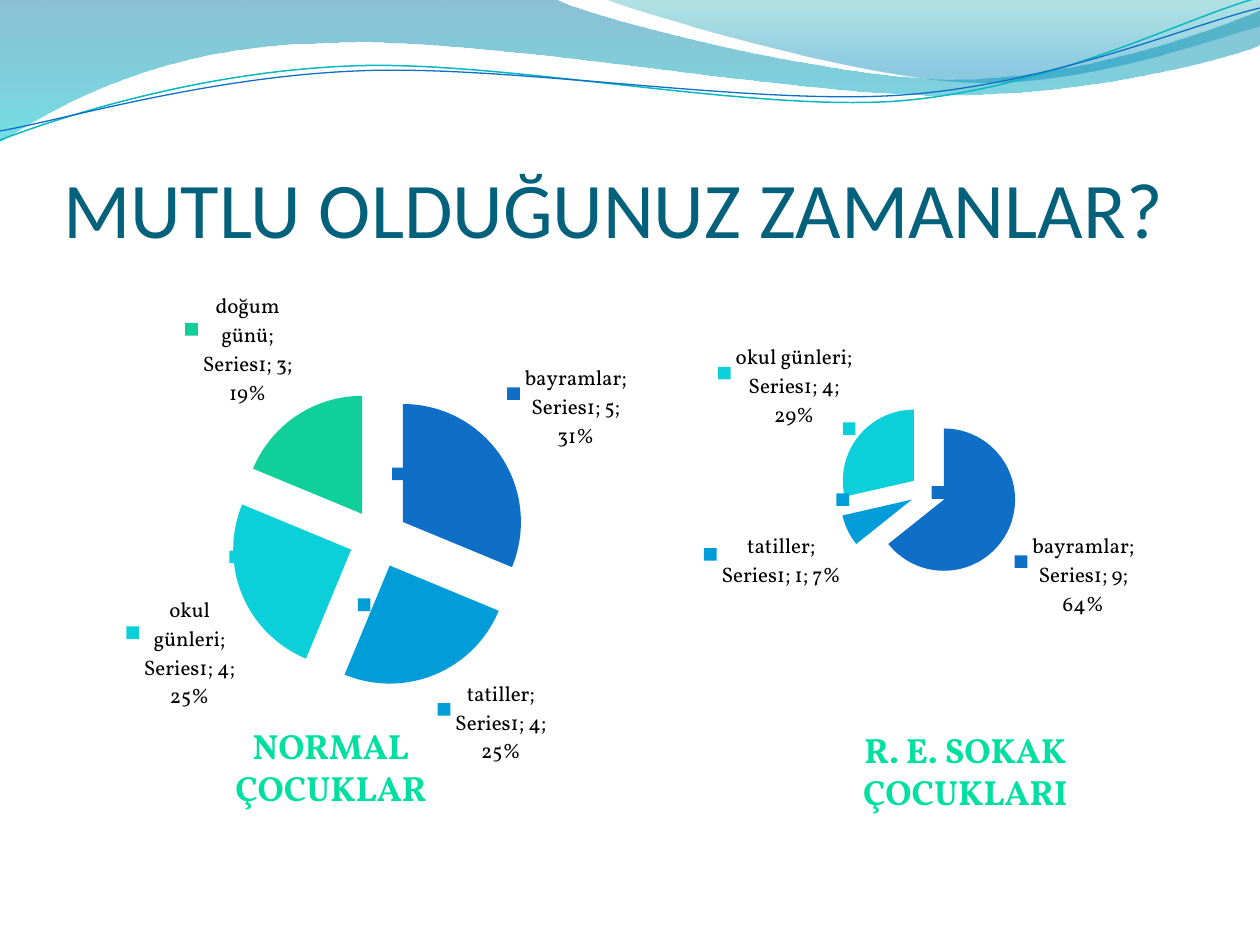
from pptx import Presentation
from pptx.chart.data import CategoryChartData
from pptx.dml.color import RGBColor
from pptx.enum.chart import XL_CHART_TYPE as ChartType, XL_LABEL_POSITION as LabelPosition
from pptx.enum.text import MSO_ANCHOR as Anchor, MSO_AUTO_SIZE as AutoSize, PP_ALIGN as Align
from pptx.oxml import parse_xml
from pptx.oxml.ns import nsdecls, qn
from pptx.util import Pt

EMU_PER_PX = 914400 / 126
BODY_FONT = "Vollkorn"
CATEGORIES = ["bayramlar", "tatiller", "okul günleri", "doğum günü"]
SLICE_COLORS = ["0F6FC6", "009DD9", "0BD0D9", "10CF9B"]
EXPLOSION = 25

# A segment of two numbers is a straight line, one of six is a Bézier curve.
BACK_WAVE = [(0, 0), (554, -1), (600, 21, 837, 79, 955, 79),
             (1075, 79, 1207, 33, 1260, 11), (1261, 45),
             (1239, 55, 1096, 96, 940, 95), (784, 95, 481, 35, 324, 43),
             (163, 45, 58, 105, -1, 142), (0, 0)]
FRONT_WAVE = [(604, -1), (641, 14, 859, 78, 969, 82),
              (1079, 87, 1211, 40, 1260, 26), (1260, 0), (604, -1)]
TEAL_CURVE = [(0, 140), (60, 117, 199, 72, 349, 66),
              (498, 59, 747, 112, 898, 101), (1050, 89, 1182, 19, 1257, -2)]
BLUE_CURVE = [(0, 131), (59, 121, 207, 77, 357, 71),
              (506, 64, 752, 106, 903, 95), (1053, 84, 1186, 26, 1260, 8)]


def px(length):
    return round(length * EMU_PER_PX)


def rgb(color):
    return RGBColor.from_string(color)


def place(shape, box):
    shape.left, shape.top, shape.width, shape.height = map(px, box)


def add_outline(slide, segments, closed):
    """Add a freeform through all control points, then bend its curves."""
    points = [segment[i:i + 2] for segment in segments for i in range(0, len(segment), 2)]
    builder = slide.shapes.build_freeform(*points[0], scale=EMU_PER_PX)
    builder.add_line_segments(points[1:], close=closed)
    shape = builder.convert_to_shape()
    shape.shadow.inherit = False
    lines = iter(list(shape._element.iter(qn("a:lnTo"))))
    for segment in segments[1:]:
        line = next(lines)
        if len(segment) == 6:
            curve = parse_xml(f'<a:cubicBezTo {nsdecls("a")}/>')
            line.addprevious(curve)
            for control in (line, next(lines), next(lines)):
                curve.append(control[0])
                control.getparent().remove(control)
    return shape


def add_wave(slide, segments, stops):
    """Add a filled wave; stops are (position, colour, opacity percent)."""
    shape = add_outline(slide, segments, True)
    shape.line.fill.background()
    shape.fill.gradient()
    shape.fill.gradient_angle = 270
    for stop, (position, color, _) in zip(shape.fill.gradient_stops, stops):
        stop.position = position
        stop.color.rgb = rgb(color)
    color_elements = list(shape._element.spPr.iter(qn("a:srgbClr")))
    for element, (_, _, opacity) in zip(color_elements, stops):
        element.append(parse_xml(f'<a:alpha {nsdecls("a")} val="{opacity * 1000}"/>'))


def add_curve(slide, segments, color, width):
    shape = add_outline(slide, segments, False)
    shape.fill.background()
    shape.line.color.rgb = rgb(color)
    shape.line.width = Pt(width)


def set_title(slide, text, box):
    title = slide.shapes.title
    place(title, box)
    frame = title.text_frame
    frame.text = text
    frame.auto_size = AutoSize.NONE
    frame.vertical_anchor = Anchor.BOTTOM
    frame.margin_left = frame.margin_right = frame.margin_bottom = 0
    paragraph = frame.paragraphs[0]
    paragraph.alignment = Align.LEFT
    font = paragraph.runs[0].font
    font.name, font.size, font.color.rgb = "Calibri", Pt(45), rgb("04617B")


def add_caption(slide, text, box):
    caption = slide.shapes.add_textbox(*map(px, box))
    frame = caption.text_frame
    frame.word_wrap = True
    frame.text = text
    paragraph = frame.paragraphs[0]
    paragraph.alignment = Align.CENTER
    font = paragraph.runs[0].font
    font.name, font.size, font.bold = BODY_FONT, Pt(20), True
    font.color.rgb = rgb("00DFA2")


def color_slices(series):
    """Colour the slices and pull them apart."""
    for index, color in enumerate(SLICE_COLORS):
        fill = series.points[index].format.fill
        fill.solid()
        fill.fore_color.rgb = rgb(color)
    explosion = f'<c:explosion {nsdecls("c")} val="{EXPLOSION}"/>'
    slices = series._element.findall(qn("c:dPt"))
    slices[0].addprevious(parse_xml(explosion))
    for element in slices:
        element.find(qn("c:spPr")).addprevious(parse_xml(explosion))


def label_slices(series, values):
    """Show every label part, but no label for an empty slice."""
    labels = series.data_labels
    labels.show_value = labels.show_percentage = True
    labels.show_category_name = labels.show_series_name = True
    labels.show_legend_key = True
    labels.position = LabelPosition.BEST_FIT
    labels.font.name, labels.font.size = BODY_FONT, Pt(12)
    labels.font.color.rgb = rgb("000000")
    element = labels._element
    element.find(qn("c:showBubbleSize")).addnext(
        parse_xml(f'<c:separator {nsdecls("c")}>; </c:separator>'))
    for index, value in enumerate(values):
        if value == 0:
            element.insert(0, parse_xml(
                f'<c:dLbl {nsdecls("c")}><c:idx val="{index}"/><c:delete val="1"/></c:dLbl>'))


def set_plot_layout(chart, box, pie_box):
    """Place the pie, given on the slide, inside the chart's box."""
    left, top, width, height = box
    pie_left, pie_top, pie_width, pie_height = pie_box
    layout = ((pie_left - left) / width, (pie_top - top) / height,
              pie_width / width, pie_height / height)
    plot_area = chart._chartSpace.find(".//" + qn("c:plotArea"))
    for old_layout in plot_area.findall(qn("c:layout")):
        plot_area.remove(old_layout)
    sizes = "".join(f'<c:{name} val="{value:.4f}"/>' for name, value in zip("xywh", layout))
    plot_area.insert(0, parse_xml(
        f'<c:layout {nsdecls("c")}><c:manualLayout><c:layoutTarget val="inner"/>'
        f'<c:xMode val="edge"/><c:yMode val="edge"/>{sizes}</c:manualLayout></c:layout>'))


def add_pie(slide, values, box, pie_box):
    data = CategoryChartData()
    data.categories = CATEGORIES
    data.add_series("", values)
    chart = slide.shapes.add_chart(ChartType.PIE, *map(px, box), data).chart
    chart.has_title = chart.has_legend = False
    chart.font.name, chart.font.size = BODY_FONT, Pt(10)
    chart.font.color.rgb = rgb("000000")
    plot = chart.plots[0]
    plot.vary_by_categories = True
    series = plot.series[0]
    # An unnamed series gets its default name in the labels.
    series._element.remove(series._element.find(qn("c:tx")))
    color_slices(series)
    label_slices(series, values)
    set_plot_layout(chart, box, pie_box)


def main():
    presentation = Presentation()
    presentation.slide_width, presentation.slide_height = px(1260), px(945)
    slide = presentation.slides.add_slide(presentation.slide_layouts[5])
    add_wave(slide, BACK_WAVE, [(0, "0074A1", 45), (1, "00C6CF", 55)])
    add_wave(slide, FRONT_WAVE, [(0, "00A1A9", 30), (0.8, "008BBF", 45)])
    add_curve(slide, TEAL_CURVE, "0AB8BF", 0.85)
    add_curve(slide, BLUE_CURVE, "0F6FC6", 0.75)
    set_title(slide, "MUTLU OLDUĞUNUZ ZAMANLAR?", (63, 96, 1134, 158))
    add_pie(slide, (5, 4, 4, 3), (63, 220, 567, 567), (231, 391, 295, 295))
    add_pie(slide, (9, 1, 4, 0), (620, 295, 601, 378), (839, 403, 178, 178))
    add_caption(slide, "NORMAL ÇOCUKLAR", (167, 718, 328, 55))
    add_caption(slide, "R. E. SOKAK ÇOCUKLARI", (778, 722, 375, 55))
    presentation.save("out.pptx")


if __name__ == "__main__":
    main()
